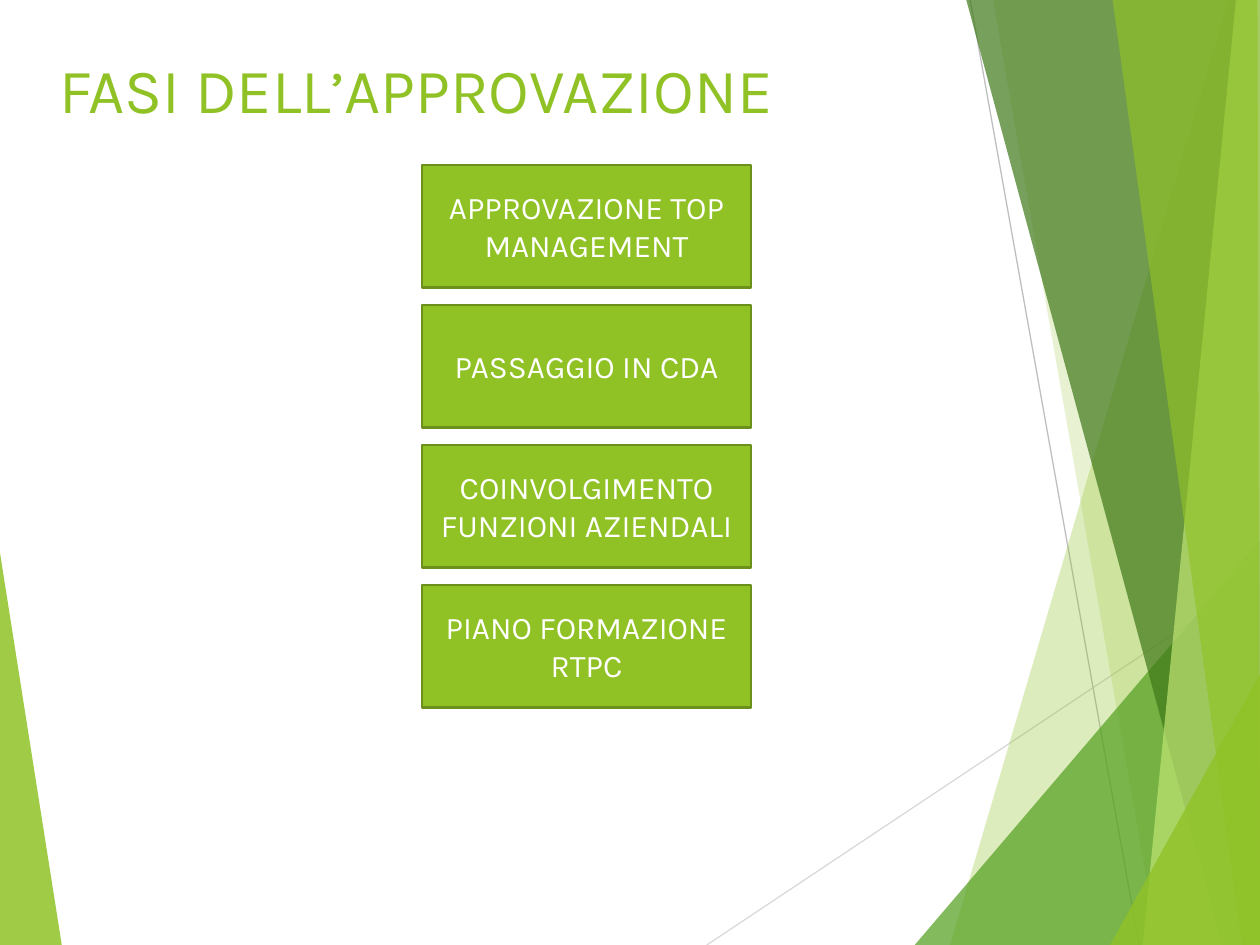
from typing import NamedTuple

from lxml import etree
from pptx import Presentation
from pptx.dml.color import RGBColor
from pptx.enum.shapes import MSO_CONNECTOR, MSO_SHAPE
from pptx.enum.text import MSO_ANCHOR, MSO_AUTO_SIZE, PP_ALIGN
from pptx.oxml.ns import qn
from pptx.util import Pt

STRAIGHT = MSO_CONNECTOR.STRAIGHT
RECTANGLE = MSO_SHAPE.RECTANGLE
TOP, MIDDLE = MSO_ANCHOR.TOP, MSO_ANCHOR.MIDDLE
LEFT, CENTER = PP_ALIGN.LEFT, PP_ALIGN.CENTER
NO_AUTOFIT = MSO_AUTO_SIZE.NONE

FONT = "Karla"
WIDTH, HEIGHT = 720, 540
COLORS = {
    "green": "90C226",
    "mid green": "54A021",
    "dark green": "3F7819",
    "light green": "C0E474",
    "border": "6B901C",
    "pale grey": "D9D9D9",
    "grey": "BFBFBF",
    "white": "FFFFFF",
}


class Ray(NamedTuple):
    start: tuple[float, float]
    end: tuple[float, float]
    color: str


class Facet(NamedTuple):
    points: list[tuple[float, float]]
    color: str
    opacity: int


BOTTOM_RIGHT, TOP_RIGHT = (WIDTH, HEIGHT), (WIDTH, 0)

LEFT_FACET = Facet([(0, 316), (35.3, HEIGHT), (0, HEIGHT)], "green", 85)
RAYS = [
    Ray((403.9, HEIGHT), (WIDTH, 329.4), "pale grey"),
    Ray((554.4, 0), (650.9, HEIGHT), "grey"),
]
RIGHT_FACETS = [
    Facet([(702, 0), (542.9, HEIGHT), BOTTOM_RIGHT, TOP_RIGHT], "green", 30),
    Facet([(567.4, 0), (661.7, HEIGHT), BOTTOM_RIGHT, TOP_RIGHT], "green", 20),
    Facet([(522.7, HEIGHT), (WIDTH, 308.9), BOTTOM_RIGHT], "mid green", 72),
    Facet([(552.2, 0), (698.4, HEIGHT), BOTTOM_RIGHT, TOP_RIGHT], "dark green", 70),
    Facet([(706.3, 0), (653, HEIGHT), BOTTOM_RIGHT, TOP_RIGHT], "light green", 70),
    Facet([(635.8, 0), (709.9, HEIGHT), BOTTOM_RIGHT, (718.6, 0)], "green", 65),
    Facet([(634.3, HEIGHT), (WIDTH, 385.2), BOTTOM_RIGHT], "green", 80),
]

# Each step lists its paragraphs
STEPS = [
    ["APPROVAZIONE TOP MANAGEMENT"],
    ["PASSAGGIO IN CDA"],
    ["COINVOLGIMENTO", "FUNZIONI AZIENDALI"],
    ["PIANO FORMAZIONE", "RTPC"],
]
STEP_LEFT, STEP_TOP, STEP_WIDTH, STEP_HEIGHT, STEP_PITCH = 241.2, 94.2, 188, 70, 80


def rgb(name: str) -> RGBColor:
    return RGBColor.from_string(COLORS[name])


def add_facet(page, facet: Facet) -> None:
    first, *others = [(Pt(x), Pt(y)) for x, y in facet.points]
    builder = page.shapes.build_freeform(*first)
    builder.add_line_segments(others, close=True)
    shape = builder.convert_to_shape()
    shape.shadow.inherit = False
    shape.line.fill.background()
    shape.fill.solid()
    shape.fill.fore_color.rgb = rgb(facet.color)
    color = shape.fill._xPr.find(f".//{qn('a:srgbClr')}")
    etree.SubElement(color, qn("a:alpha"), val=str(facet.opacity * 1000))


def add_ray(page, ray: Ray) -> None:
    ends = [Pt(value) for value in (*ray.start, *ray.end)]
    line = page.shapes.add_connector(STRAIGHT, *ends)
    line.line.color.rgb = rgb(ray.color)
    line.line.width = Pt(0.75)
    etree.SubElement(line._element.spPr, qn("a:effectLst"))


def write(frame, lines: list[str], size: float, color: str, align, anchor) -> None:
    frame.word_wrap = True
    frame.auto_size = NO_AUTOFIT
    frame.vertical_anchor = anchor
    for index, text in enumerate(lines):
        para = frame.paragraphs[0] if index == 0 else frame.add_paragraph()
        para.alignment = align
        span = para.add_run()
        span.text = text
        span.font.name = FONT
        span.font.size = Pt(size)
        span.font.color.rgb = rgb(color)


def add_step(page, lines: list[str], top: float) -> None:
    box = page.shapes.add_shape(
        RECTANGLE, Pt(STEP_LEFT), Pt(top), Pt(STEP_WIDTH), Pt(STEP_HEIGHT)
    )
    box.shadow.inherit = False
    box.fill.solid()
    box.fill.fore_color.rgb = rgb("green")
    box.line.color.rgb = rgb("border")
    box.line.width = Pt(1.5)
    write(box.text_frame, lines, 18, "white", CENTER, MIDDLE)


def main() -> None:
    deck = Presentation()
    deck.slide_width, deck.slide_height = Pt(WIDTH), Pt(HEIGHT)
    page = deck.slides.add_slide(deck.slide_layouts[5])

    # Title
    title = page.shapes.title
    title.left, title.top, title.width, title.height = Pt(26.6), Pt(25.2), Pt(500), Pt(104)
    write(title.text_frame, ["FASI DELL’APPROVAZIONE"], 36, "green", LEFT, TOP)

    # Green facets and thin rays
    add_facet(page, LEFT_FACET)
    for ray in RAYS:
        add_ray(page, ray)
    for facet in RIGHT_FACETS:
        add_facet(page, facet)

    # Column of approval steps
    for index, lines in enumerate(STEPS):
        add_step(page, lines, STEP_TOP + index * STEP_PITCH)

    deck.save("out.pptx")


if __name__ == "__main__":
    main()
